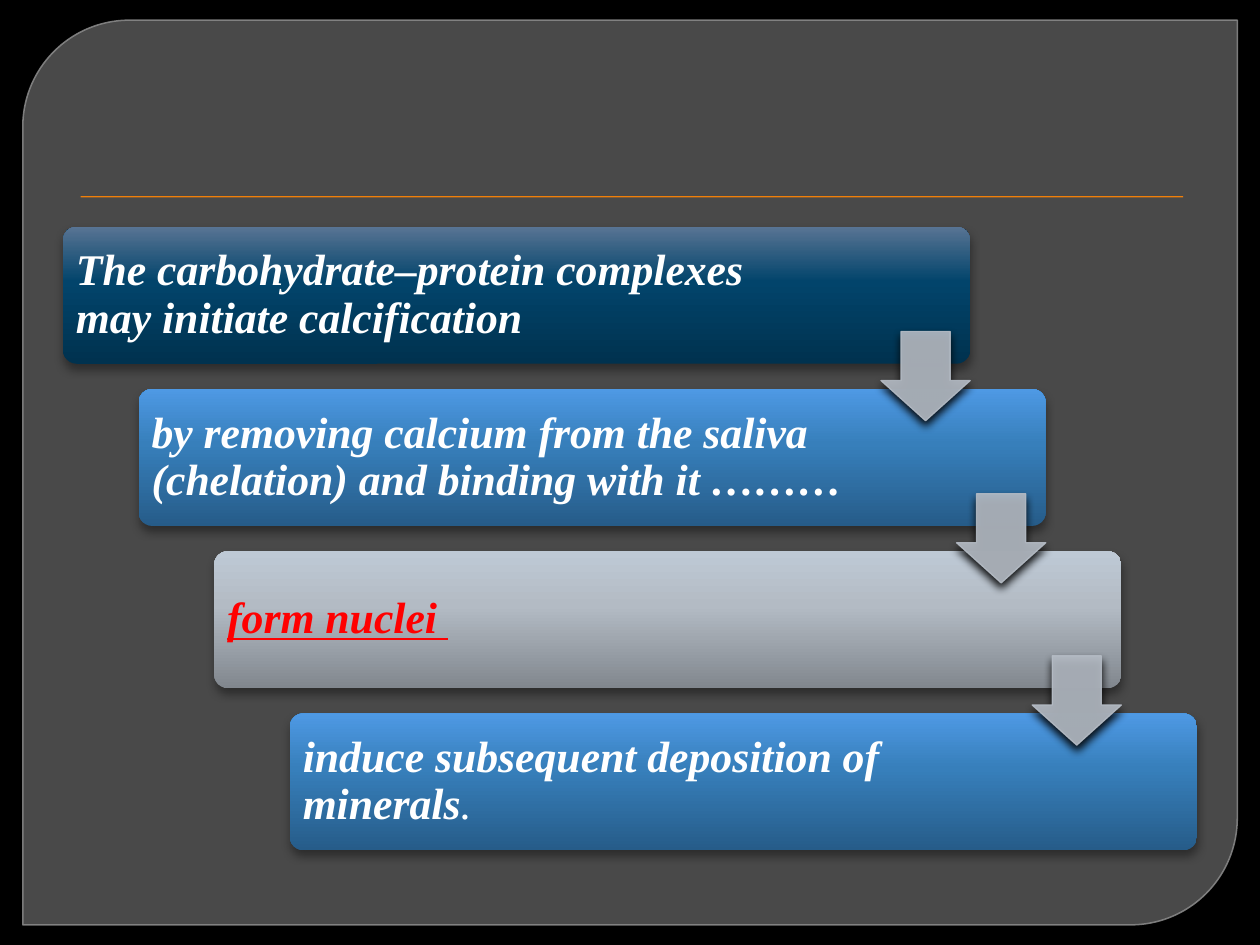
from lxml.etree import SubElement
from copy import deepcopy
from pptx import Presentation
from pptx.dml.color import RGBColor
from pptx.enum.shapes import MSO_SHAPE as SHAPE
from pptx.enum.text import MSO_ANCHOR as ANCHOR, PP_ALIGN as ALIGN
from pptx.oxml.ns import qn
from pptx.util import Pt

COLORS = {
    "background": "000000", "panel": "717171", "panel_edge": "898989",
    "divider": "F07F09", "arrow": "B5BCC5", "shadow": "000000",
    "text": "FFFFFF", "highlight": "FF0000",
}
# Gradient colours from bottom to top
GRADIENTS = {
    "navy": ["00324F", "02446B", "587494"],
    "blue": ["265C89", "377FBB", "4E99E4"],
    "silver": ["81878E", "B3BBC4", "BEC9D5"],
}


def set_alpha(fill, percent):
    for color in fill._xPr.iter(qn("a:srgbClr")):
        SubElement(color, qn("a:alpha"), val=str(percent * 1000))


def add_figure(kind, left, top, width, height, adjustments=(), shadow=None):
    """Add a shape without outline; shadow is (blur, distance, opacity)."""
    figure = slide.shapes.add_shape(kind, Pt(left), Pt(top), Pt(width), Pt(height))
    for index, value in enumerate(adjustments):
        figure.adjustments[index] = value
    figure.line.fill.background()
    figure.shadow.inherit = False
    if shadow:
        blur, distance, opacity = shadow
        effects = figure.element.spPr.find(qn("a:effectLst"))
        outer = SubElement(effects, qn("a:outerShdw"), blurRad=str(Pt(blur)),
                           dist=str(Pt(distance)), dir="5400000", rotWithShape="0")
        color = SubElement(outer, qn("a:srgbClr"), val=COLORS["shadow"])
        SubElement(color, qn("a:alpha"), val=str(opacity * 1000))
    return figure


deck = Presentation()
deck.slide_width, deck.slide_height = Pt(720), Pt(540)
slide = deck.slides.add_slide(deck.slide_layouts[6])
slide.background.fill.solid()
slide.background.fill.fore_color.rgb = RGBColor.from_string(COLORS["background"])

# Panel and divider
panel = add_figure(SHAPE.ROUND_2_DIAG_RECTANGLE, 13, 11.5, 694, 517, (0.118, 0))
panel.fill.solid()
panel.fill.fore_color.rgb = RGBColor.from_string(COLORS["panel"])
set_alpha(panel.fill, 65)
panel.line.color.rgb = RGBColor.from_string(COLORS["panel_edge"])
panel.line.width = Pt(0.87)
set_alpha(panel.line.fill, 88)

divider = add_figure(SHAPE.RECTANGLE, 46.1, 112.1, 630, 0.72, shadow=(1, 1, 75))
divider.fill.solid()
divider.fill.fore_color.rgb = RGBColor.from_string(COLORS["divider"])

# Staircase of steps: gradient, text colour, underline, runs of (text, bold)
STEPS = [
    ("navy", "text", False,
     [("The carbohydrate–protein complexes may initiate calcification", True)]),
    ("blue", "text", False,
     [("by removing calcium from the saliva (chelation) and binding with it ………", True)]),
    ("silver", "highlight", True, [("form nuclei ", True)]),
    ("blue", "text", False,
     [("induce subsequent deposition of minerals", True), (".", False)]),
]
STEP_X, STEP_Y = 43.2, 92.7
SOFT_SHADOW = (5.2, 3, 40)

for row, (gradient, text_color, underlined, runs) in enumerate(STEPS):
    step = add_figure(SHAPE.ROUNDED_RECTANGLE, 36 + row * STEP_X, 129.6 + row * STEP_Y,
                      518.4, 78.3, (0.1,), SOFT_SHADOW)
    step.fill.gradient()
    step.fill.gradient_angle = 90
    stop_list = step.element.spPr.find(".//" + qn("a:gsLst"))
    stop_list.append(deepcopy(stop_list[-1]))
    for stop, position, color in zip(step.fill.gradient_stops, (0, 0.6, 1),
                                     GRADIENTS[gradient]):
        stop.position = position
        stop.color.rgb = RGBColor.from_string(color)

    frame = step.text_frame
    frame.word_wrap = True
    frame.vertical_anchor = ANCHOR.MIDDLE
    frame.margin_left = Pt(5.2)
    frame.margin_right = Pt(92 if row == 0 else 99)
    frame.margin_top = frame.margin_bottom = Pt(5.2)
    sentence = frame.paragraphs[0]
    sentence.alignment = ALIGN.LEFT
    sentence.line_spacing = 0.9
    for text, bold in runs:
        run = sentence.add_run()
        run.text = text
        run.font.name = "Times New Roman"
        run.font.size = Pt(25)
        run.font.bold = bold
        run.font.italic = True
        if underlined:
            run.font.underline = True
        run.font.color.rgb = RGBColor.from_string(COLORS[text_color])

# Arrows from each step to the next
for row in range(len(STEPS) - 1):
    arrow = add_figure(SHAPE.DOWN_ARROW, 503.4 + row * STEP_X, 189.4 + row * STEP_Y,
                       51, 51, (0.55, 0.45), SOFT_SHADOW)
    # Adjustments of a down arrow: shaft width, then head length
    arrow.adjustments[0], arrow.adjustments[1] = 0.55, 0.45
    arrow.fill.solid()
    arrow.fill.fore_color.rgb = RGBColor.from_string(COLORS["arrow"])
    set_alpha(arrow.fill, 90)
    arrow.line.color.rgb = RGBColor.from_string(COLORS["arrow"])
    arrow.line.width = Pt(0.75)
    set_alpha(arrow.line.fill, 90)

deck.save("out.pptx")
